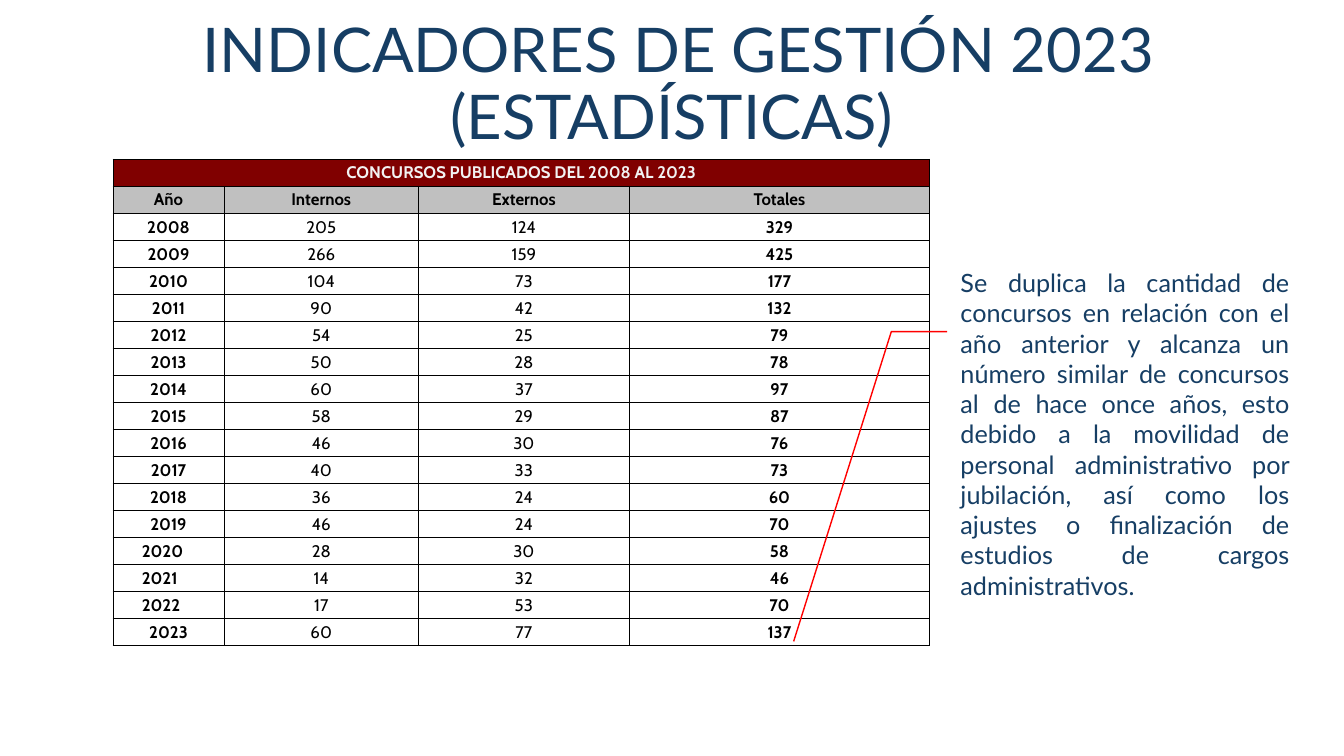
from lxml.etree import SubElement
from pptx import Presentation
from pptx.dml.color import RGBColor
from pptx.enum.shapes import MSO_SHAPE as Preset
from pptx.enum.text import MSO_ANCHOR as Anchor, PP_ALIGN as Align
from pptx.oxml.ns import qn
from pptx.util import Pt

NAVY, MAROON, GRAY, RED = "163E64", "800000", "C0C0C0", "FF0000"
BLACK, WHITE, PALE = "000000", "FFFFFF", "F2F2F2"

TABLE_TITLE = "CONCURSOS PUBLICADOS DEL 2008 AL 2023"
HEADERS = ["Año", "Internos", "Externos", "Totales"]
CONTESTS = [
    (2008, 205, 124, 329), (2009, 266, 159, 425), (2010, 104, 73, 177),
    (2011, 90, 42, 132), (2012, 54, 25, 79), (2013, 50, 28, 78),
    (2014, 60, 37, 97), (2015, 58, 29, 87), (2016, 46, 30, 76),
    (2017, 40, 33, 73), (2018, 36, 24, 60), (2019, 46, 24, 70),
    (2020, 28, 30, 58), (2021, 14, 32, 46), (2022, 17, 53, 70),
    (2023, 60, 77, 137),
]
INDENTED_YEARS = (2020, 2021, 2022)
COLUMN_WIDTHS = [79.2, 139, 150.5, 214.6]
ROW_HEIGHT = 19.28
NOTE = (
    "Se duplica la cantidad de concursos en relación con el año anterior y "
    "alcanza un número similar de concursos al de hace once años, esto debido "
    "a la movilidad de personal administrativo por jubilación, así como los "
    "ajustes o finalización de estudios de cargos administrativos."
)


def color(value):
    return RGBColor.from_string(value)


def write(paragraph, text, font, size, ink, align=Align.CENTER, bold=False):
    paragraph.alignment = align
    run = paragraph.add_run()
    run.text = text
    run.font.name = font
    run.font.size = Pt(size)
    run.font.bold = bold
    run.font.color.rgb = color(ink)


def indent(paragraph, attribute, points):
    """Set marL (whole paragraph) or indent (first line only)."""
    paragraph._p.get_or_add_pPr().set(attribute, str(Pt(points)))


def add_title(slide, text):
    box = slide.shapes.add_textbox(Pt(66), Pt(9.4), Pt(828), Pt(104.4))
    frame = box.text_frame
    frame.word_wrap = True
    frame.vertical_anchor = Anchor.MIDDLE
    paragraph = frame.paragraphs[0]
    paragraph.line_spacing = 0.9
    indent(paragraph, "indent", 10)
    write(paragraph, text, "Lato", 44, NAVY)


def add_borders(cell):
    properties = cell._tc.get_or_add_tcPr()
    for side in ("lnL", "lnR", "lnT", "lnB"):
        line = SubElement(properties, qn(f"a:{side}"), w=str(Pt(0.75)))
        fill = SubElement(line, qn("a:solidFill"))
        SubElement(fill, qn("a:srgbClr"), val=BLACK)


def style_cell(cell, fill=None):
    add_borders(cell)
    cell.margin_left = cell.margin_right = Pt(5)
    cell.margin_top = cell.margin_bottom = Pt(2)
    if fill:
        cell.vertical_anchor = Anchor.MIDDLE
        cell.fill.solid()
        cell.fill.fore_color.rgb = color(fill)
    else:
        cell.vertical_anchor = Anchor.BOTTOM
        cell.fill.background()


def add_contest_table(slide):
    rows = [[TABLE_TITLE, "", "", ""], HEADERS, *CONTESTS]
    table = slide.shapes.add_table(
        len(rows), len(HEADERS), Pt(80.8), Pt(113.8),
        Pt(sum(COLUMN_WIDTHS)), Pt(ROW_HEIGHT * len(rows))).table
    table.first_row = table.horz_banding = False
    for column, width in zip(table.columns, COLUMN_WIDTHS):
        column.width = Pt(width)
    for row_index, values in enumerate(rows):
        table.rows[row_index].height = Pt(ROW_HEIGHT)
        fill = {0: MAROON, 1: GRAY}.get(row_index)
        ink = PALE if row_index == 0 else BLACK
        for column_index, value in enumerate(values):
            cell = table.cell(row_index, column_index)
            style_cell(cell, fill)
            if value == "":
                continue
            paragraph = cell.text_frame.paragraphs[0]
            align = Align.CENTER
            if column_index == 0 and value in INDENTED_YEARS:
                align = Align.LEFT
                indent(paragraph, "marL", 15.5)
            bold = row_index < 2 or column_index in (0, 3)
            write(paragraph, str(value), "Cabin", 12, ink, align, bold)
    table.cell(0, 0).merge(table.cell(0, len(HEADERS) - 1))


def add_callout(slide, text):
    callout = slide.shapes.add_shape(
        Preset.LINE_CALLOUT_2_NO_BORDER,
        Pt(679), Pt(192.2), Pt(249.1), Pt(235.4))
    callout.shadow.inherit = False
    for index, value in enumerate((0.19, -0.01, 0.19, -0.17, 1.13, -0.45)):
        callout.adjustments[index] = value
    callout.fill.solid()
    callout.fill.fore_color.rgb = color(WHITE)
    callout.line.color.rgb = color(RED)
    callout.line.width = Pt(1)
    frame = callout.text_frame
    frame.word_wrap = True
    frame.vertical_anchor = Anchor.MIDDLE
    write(frame.paragraphs[0], text, "Lato", 18, NAVY, Align.JUSTIFY)


def main():
    presentation = Presentation()
    presentation.slide_width = Pt(960)
    presentation.slide_height = Pt(540)
    slide = presentation.slides.add_slide(presentation.slide_layouts[6])
    add_title(slide, "INDICADORES DE GESTIÓN 2023 (ESTADÍSTICAS)")
    add_contest_table(slide)
    add_callout(slide, NOTE)
    presentation.save("out.pptx")


if __name__ == "__main__":
    main()
